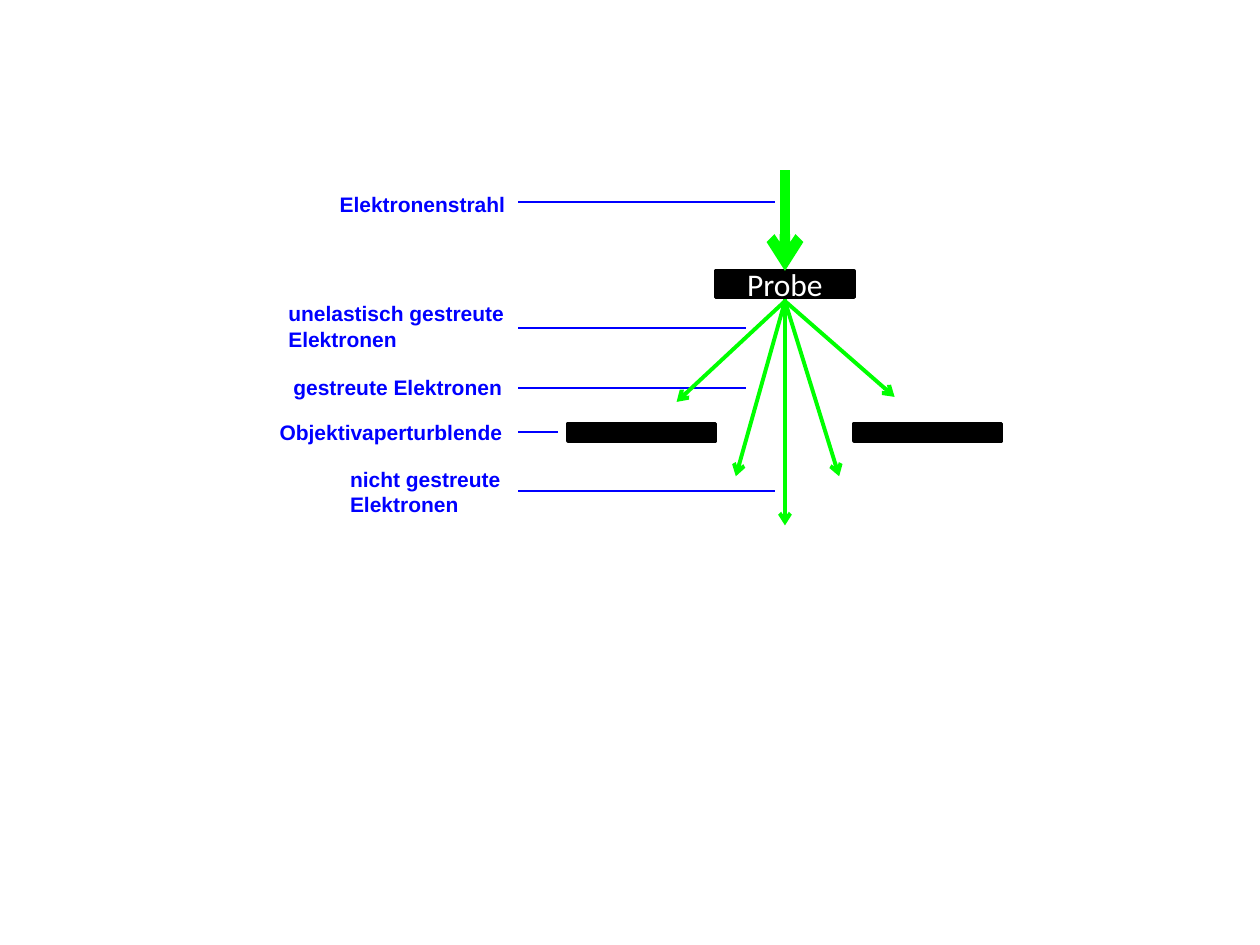
"""Build the slide on electron scattering at an objective aperture."""
from lxml import etree
from pptx import Presentation
from pptx.dml.color import RGBColor
from pptx.enum import shapes, text
from pptx.oxml import ns
from pptx.util import Inches, Pt


def rgb(value):
    return RGBColor.from_string(value)


class Diagram:
    BEAM, LABEL, SOLID, LIGHT = "00FF00", "0000FF", "000000", "FFFFFF"

    def __init__(self, slide):
        self.slide = slide

    def font(self, paragraph, name, size, color, bold=False):
        font = paragraph.font
        font.name, font.size, font.bold = name, Pt(size), bold
        font.color.rgb = rgb(color)

    def line(self, start, end, color, width):
        rule = self.slide.shapes.add_connector(
            shapes.MSO_CONNECTOR.STRAIGHT, *map(Inches, (*start, *end)))
        rule.line.color.rgb = rgb(color)
        rule.line.width = Pt(width)
        etree.SubElement(rule._element.spPr, ns.qn("a:effectLst"))
        return rule

    def beam(self, start, end, width=2.25):
        ray = self.line(start, end, self.BEAM, width)
        etree.SubElement(ray.line._get_or_add_ln(), ns.qn("a:tailEnd"), type="arrow")

    def block(self, left, top, width, height, caption=""):
        bar = self.slide.shapes.add_shape(
            shapes.MSO_SHAPE.RECTANGLE, *map(Inches, (left, top, width, height)))
        bar.shadow.inherit = False
        bar.fill.solid()
        bar.fill.fore_color.rgb = rgb(self.SOLID)
        bar.line.color.rgb = rgb(self.SOLID)
        bar.line.width = Pt(2)
        if caption:
            frame = bar.text_frame
            frame.text = caption
            frame.vertical_anchor = text.MSO_ANCHOR.MIDDLE
            frame.paragraphs[0].alignment = text.PP_ALIGN.CENTER
            self.font(frame.paragraphs[0], "Calibri", 18, self.LIGHT)

    def label(self, left, top, width, height, wording, align):
        box = self.slide.shapes.add_textbox(*map(Inches, (left, top, width, height)))
        frame = box.text_frame
        frame.word_wrap = False
        frame.auto_size = text.MSO_AUTO_SIZE.SHAPE_TO_FIT_TEXT
        frame.text = wording
        for paragraph in frame.paragraphs:
            paragraph.alignment = align
            self.font(paragraph, "Arial", 12, self.LABEL, bold=True)


def main():
    deck = Presentation()
    deck.slide_width, deck.slide_height = Inches(10), Inches(7.5)
    diagram = Diagram(deck.slides.add_slide(deck.slide_layouts[6]))

    left, right = text.PP_ALIGN.LEFT, text.PP_ALIGN.RIGHT
    callouts = [
        ("Elektronenstrahl", (2.58, 1.47, 1.53, 0.3), right, 6.15, 1.6),
        ("unelastisch gestreute\nElektronen", (2.19, 2.34, 2, 0.5), left, 5.92, 2.6),
        ("gestreute Elektronen", (2.23, 2.92, 1.9, 0.3), left, 5.92, 3.08),
        ("Objektivaperturblende", (2.12, 3.28, 1.99, 0.3), left, 4.43, 3.43),
        ("nicht gestreute\nElektronen", (2.68, 3.65, 1.46, 0.5), left, 6.15, 3.9),
    ]
    for wording, place, align, target, level in callouts:
        diagram.label(*place, wording, align)
        diagram.line((target, level), (4.11, level), diagram.LABEL, 1.25)

    axis = 6.23
    diagram.beam((axis, 2.36), (axis, 4.17))
    diagram.block(5.68, 2.15, 1.1, 0.21, "Probe")
    diagram.beam((axis, 1.35), (axis, 2.15), 6)
    for aperture_left in (4.51, 6.78):
        diagram.block(aperture_left, 3.36, 1.17, 0.14)
    for end in ((5.37, 3.19), (5.84, 3.78), (6.66, 3.78), (7.1, 3.15)):
        diagram.beam((axis, 2.39), end)

    deck.save("out.pptx")


if __name__ == "__main__":
    main()
